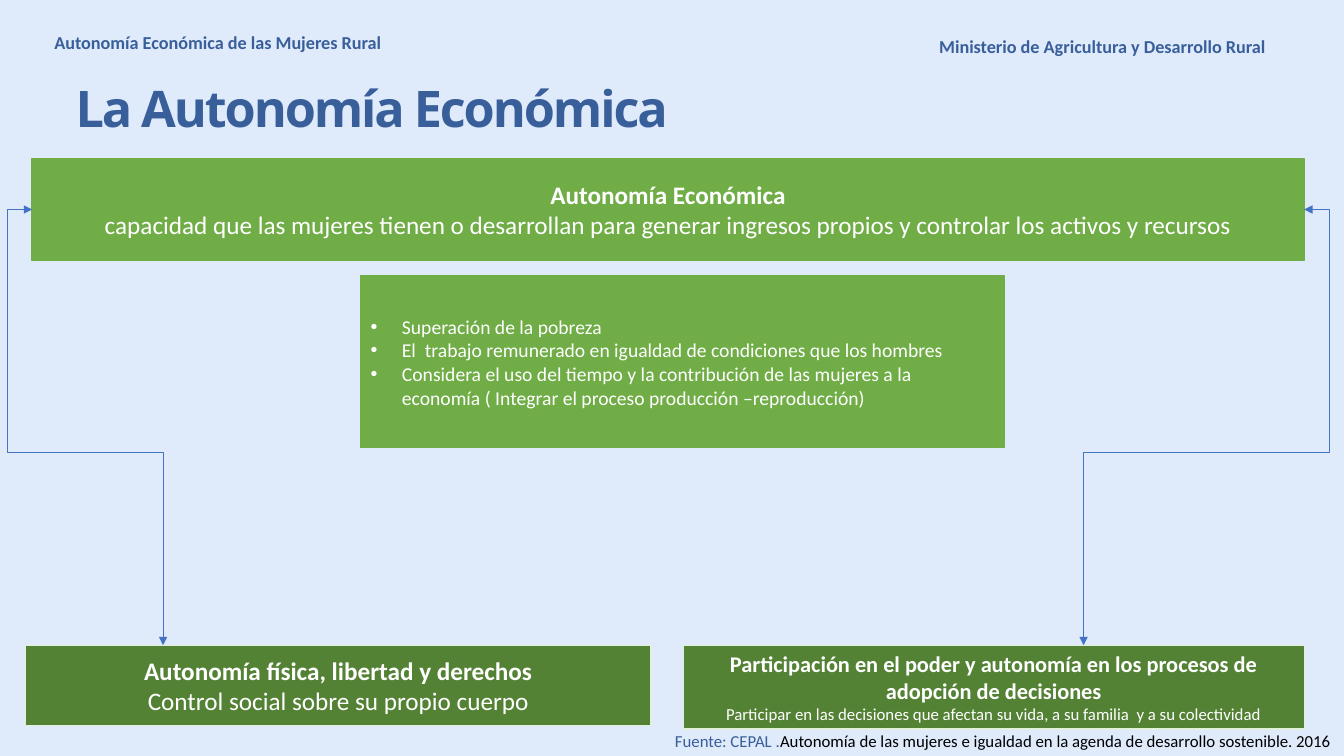
from lxml import etree
from pptx import Presentation
from pptx.dml.color import RGBColor
from pptx.enum.shapes import MSO_CONNECTOR, MSO_SHAPE
from pptx.enum.text import MSO_ANCHOR, MSO_AUTO_SIZE, PP_ALIGN
from pptx.oxml.ns import qn
from pptx.util import Cm, Pt

RECT = MSO_SHAPE.RECTANGLE
ELBOW = MSO_CONNECTOR.ELBOW
LEFT, CENTER = PP_ALIGN.LEFT, PP_ALIGN.CENTER
MIDDLE = MSO_ANCHOR.MIDDLE
HEX = {"back": "DFEAFB", "navy": "395F9B", "green": "70AD47", "dark": "548235",
       "pale": "E2F0D9", "arrow": "4472C4", "white": "FFFFFF", "black": "000000"}
RGB = {name: RGBColor.from_string(code) for name, code in HEX.items()}


def style(run, size, color, bold=False, face="Calibri"):
    font = run.font
    font.name, font.size, font.bold = face, Pt(size), bold
    font.color.rgb = RGB[color]


def add_box(place, fill, edge, align, lines):
    box = slide.shapes.add_shape(RECT, *map(Cm, place))
    box.shadow.inherit = False
    box.fill.solid()
    box.fill.fore_color.rgb = RGB[fill]
    box.line.color.rgb = RGB[edge]
    box.line.width = Pt(1)
    frame = box.text_frame
    frame.word_wrap = True
    frame.vertical_anchor = MIDDLE
    frame.text = "\n".join(text for text, size, bold in lines)
    for para, (text, size, bold) in zip(frame.paragraphs, lines):
        para.alignment = align
        style(para.runs[0], size, "white", bold)
    return box


prs = Presentation()
prs.slide_width, prs.slide_height = Cm(33.87), Cm(19.05)
slide = prs.slides.add_slide(prs.slide_layouts[5])
slide.background.fill.solid()
slide.background.fill.fore_color.rgb = RGB["back"]

# Title
title = slide.shapes.title
title.left, title.top, title.width, title.height = map(Cm, (1.65, 1.8, 31.67, 1.8))
frame = title.text_frame
frame.text = "La Autonomía Económica"
frame.word_wrap = True
frame.auto_size = MSO_AUTO_SIZE.NONE
frame.vertical_anchor = MIDDLE
para = frame.paragraphs[0]
para.alignment = LEFT
style(para.runs[0], 36, "navy", True, "Noto Sans")
para.runs[0].font._element.set("spc", "-150")

# Headers and source line
notes = [
    ((1.12, 0.66, 8.99, 0.81), False,
     [("Autonomía Económica de las Mujeres Rural", 13, "navy", True)]),
    ((23.42, 0.76, 8.86, 0.81), False,
     [("Ministerio de Agricultura y Desarrollo Rural", 13, "navy", True)]),
    ((16.76, 18.29, 17.09, 1.27), True,
     [("Fuente: CEPAL .", 12, "navy", False),
      ("Autonomía de las mujeres e igualdad en la agenda de desarrollo sostenible. 2016",
       12, "black", False)]),
]
for place, wrap, parts in notes:
    frame = slide.shapes.add_textbox(*map(Cm, place)).text_frame
    frame.word_wrap = wrap
    for text, size, color, bold in parts:
        run = frame.paragraphs[0].add_run()
        run.text = text
        style(run, size, color, bold)

# Main idea and the two linked autonomies
add_box((0.81, 3.99, 32.05, 2.57), "green", "green", CENTER, [
    ("Autonomía Económica", 18, True),
    ("capacidad que las mujeres tienen o desarrollan para generar ingresos propios "
     "y controlar los activos y recursos", 18, False)])
add_box((0.64, 16.26, 15.77, 2.03), "dark", "pale", CENTER, [
    ("Autonomía física, libertad y derechos", 18, True),
    ("Control social sobre su propio cuerpo", 18, False)])
add_box((17.22, 16.26, 15.65, 2.11), "dark", "pale", CENTER, [
    ("Participación en el poder y autonomía en los procesos de adopción de decisiones",
     16, True),
    ("Participar en las decisiones que afectan su vida, a su familia  y a su colectividad",
     12, False)])

# Bulleted list
goals = add_box((9.09, 6.96, 16.23, 4.32), "green", "green", LEFT, [
    ("Superación de la pobreza", 14, False),
    ("El  trabajo remunerado en igualdad de condiciones que los hombres", 14, False),
    ("Considera el uso del tiempo y la contribución de las mujeres a la economía "
     "( Integrar el proceso producción –reproducción)", 14, False)])
for para in goals.text_frame.paragraphs:
    props = para._p.get_or_add_pPr()
    props.set("marL", str(Cm(0.79)))
    props.set("indent", str(-Cm(0.79)))
    etree.SubElement(props, qn("a:buFont")).set("typeface", "Arial")
    etree.SubElement(props, qn("a:buChar")).set("char", "•")

# Two-way arrows: out to the side, down to the bend, back in and down
top, bend, foot = 5.28, 11.4, 16.26
for start, side, end in [(0.81, 0.18, 4.11), (32.87, 33.5, 27.31)]:
    link = slide.shapes.add_connector(ELBOW, Cm(start), Cm(top), Cm(end), Cm(foot))
    link.line.color.rgb = RGB["arrow"]
    link.line.width = Pt(0.5)
    props = link._element.spPr
    shape = props.find(qn("a:prstGeom"))
    shape.set("prst", "bentConnector4")
    turns = shape.find(qn("a:avLst"))
    if turns is None:
        turns = etree.SubElement(shape, qn("a:avLst"))
    ratios = [(side - start) / (end - start), (bend - top) / (foot - top)]
    for num, ratio in enumerate(ratios, 1):
        guide = etree.SubElement(turns, qn("a:gd"))
        guide.set("name", f"adj{num}")
        guide.set("fmla", f"val {round(ratio * 100000)}")
    line = props.find(qn("a:ln"))
    for tip in ("a:headEnd", "a:tailEnd"):
        etree.SubElement(line, qn(tip)).set("type", "triangle")
    etree.SubElement(props, qn("a:effectLst"))

prs.save("out.pptx")
